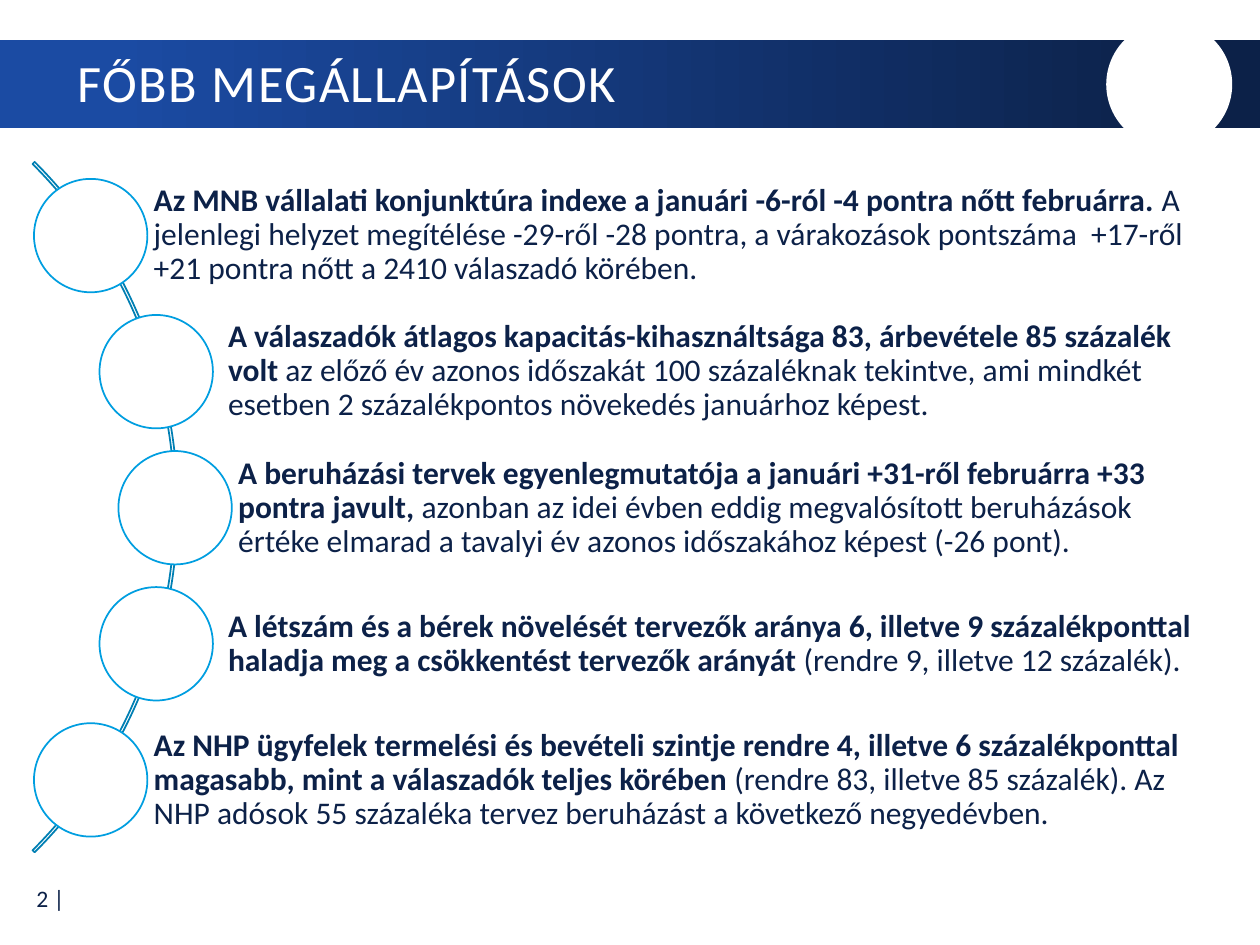
from dataclasses import dataclass

import pptx
import pptx.dml.color
import pptx.enum.shapes
import pptx.enum.text
import pptx.util

Inches = pptx.util.Inches
Pt = pptx.util.Pt
Shape = pptx.enum.shapes.MSO_SHAPE
Align = pptx.enum.text.PP_ALIGN


@dataclass(frozen=True)
class Theme:
    font: str = "Calibri"
    navy: str = "0C2148"
    royal: str = "1B4BA3"
    arc: str = "007FB3"
    ring: str = "009EE0"
    white: str = "FFFFFF"
    title_size: float = 30
    body_size: float = 18
    number_size: float = 13.5


THEME = Theme()
RIGHT_EDGE = 9.74
CIRCLE = 0.9
BAR_HEIGHT = 0.72
FIRST_CENTRE = 1.87
STEP = 1.08

# Circle centre from the left, text indent, bold lead, remaining text
FINDINGS = [
    (0.72, 0.5,
     "Az MNB vállalati konjunktúra indexe a januári -6-ról -4 pontra nőtt februárra. ",
     "A jelenlegi helyzet megítélése -29-ről -28 pontra, a várakozások pontszáma  "
     "+17-ről +21 pontra nőtt a 2410 válaszadó körében."),
    (1.24, 0.57,
     "A válaszadók átlagos kapacitás-kihasználtsága 83, árbevétele 85 százalék volt ",
     "az előző év azonos időszakát 100 százaléknak tekintve, ami mindkét esetben "
     "2 százalékpontos növekedés januárhoz képest."),
    (1.39, 0.5,
     "A beruházási tervek egyenlegmutatója a januári +31-ről februárra +33 pontra javult, ",
     "azonban az idei évben eddig megvalósított beruházások értéke elmarad a tavalyi év "
     "azonos időszakához képest (-26 pont)."),
    (1.24, 0.57,
     "A létszám és a bérek növelését tervezők aránya 6, illetve 9 százalékponttal "
     "haladja meg a csökkentést tervezők arányát ",
     "(rendre 9, illetve 12 százalék)."),
    (0.72, 0.5,
     "Az NHP ügyfelek termelési és bevételi szintje rendre 4, illetve 6 százalékponttal "
     "magasabb, mint a válaszadók teljes körében ",
     "(rendre 83, illetve 85 százalék). Az NHP adósok 55 százaléka tervez beruházást "
     "a következő negyedévben."),
]


def rgb(value):
    return pptx.dml.color.RGBColor.from_string(value)


def add_shape(page, kind, left, top, width, height, fill=None, line=None):
    shape = page.shapes.add_shape(
        kind, Inches(left), Inches(top), Inches(width), Inches(height))
    shape.shadow.inherit = False
    if fill:
        shape.fill.solid()
        shape.fill.fore_color.rgb = rgb(fill)
    else:
        shape.fill.background()
    if line:
        shape.line.color.rgb = rgb(line)
        shape.line.width = Pt(1)
    else:
        shape.line.fill.background()
    return shape


def write(box, spans, size, color, align=Align.LEFT, spacing=0.9, indent=0.1, margin=0.05):
    """Fill the box with one paragraph of (text, bold) spans and return its runs."""
    frame = box.text_frame
    frame.word_wrap = True
    frame.vertical_anchor = pptx.enum.text.MSO_ANCHOR.MIDDLE
    frame.margin_left = Inches(indent)
    frame.margin_right = frame.margin_top = frame.margin_bottom = Inches(margin)
    para = frame.paragraphs[0]
    para.alignment = align
    para.line_spacing = spacing
    for text, bold in spans:
        span = para.add_run()
        span.text = text
        span.font.name = THEME.font
        span.font.size = Pt(size)
        span.font.bold = bold
        span.font.color.rgb = rgb(color)
    return para.runs


def add_text(page, left, top, width, height, text, size, color, **layout):
    box = page.shapes.add_textbox(
        Inches(left), Inches(top), Inches(width), Inches(height))
    return write(box, [(text, False)], size, color, **layout)


def add_header(page):
    band = add_shape(page, Shape.RECTANGLE, 0, 0.32, 10, 0.7)
    band.fill.gradient()
    band.fill.gradient_angle = 0
    stops = ((0.09, THEME.royal), (0.95, THEME.navy))
    for stop, (position, color) in zip(band.fill.gradient_stops, stops):
        stop.position = position
        stop.color.rgb = rgb(color)
    add_shape(page, Shape.OVAL, 8.78, 0.17, 1, 1, THEME.white)
    title = add_text(page, 0.52, 0.34, 8.32, 0.67, "FŐBB MEGÁLLAPÍTÁSOK",
                     THEME.title_size, THEME.white)
    title[0].font._element.set("spc", "80")


def add_arc(page):
    arc = add_shape(page, Shape.BLOCK_ARC, -6.34, 0.15, 7.75, 7.75, line=THEME.arc)
    for index, value in enumerate((189, 27, 0.003)):
        arc.adjustments[index] = value


def add_finding(page, middle, centre, indent, lead, rest):
    bar = add_shape(page, Shape.RECTANGLE, centre, middle - BAR_HEIGHT / 2,
                    RIGHT_EDGE - centre, BAR_HEIGHT, THEME.white)
    write(bar, [(lead, True), (rest, False)], THEME.body_size, THEME.navy, indent=indent)
    add_shape(page, Shape.OVAL, centre - CIRCLE / 2, middle - CIRCLE / 2,
              CIRCLE, CIRCLE, THEME.white, THEME.ring)


def main():
    deck = pptx.Presentation()
    deck.slide_width = Inches(10)
    deck.slide_height = Inches(7.5)
    page = deck.slides.add_slide(deck.slide_layouts[6])
    add_header(page)
    add_text(page, 0.01, 6.94, 0.6, 0.37, "2 |", THEME.number_size, THEME.navy,
             align=Align.RIGHT, spacing=1, margin=0.1)
    add_arc(page)
    for row, finding in enumerate(FINDINGS):
        add_finding(page, FIRST_CENTRE + row * STEP, *finding)
    deck.save("out.pptx")


if __name__ == "__main__":
    main()
